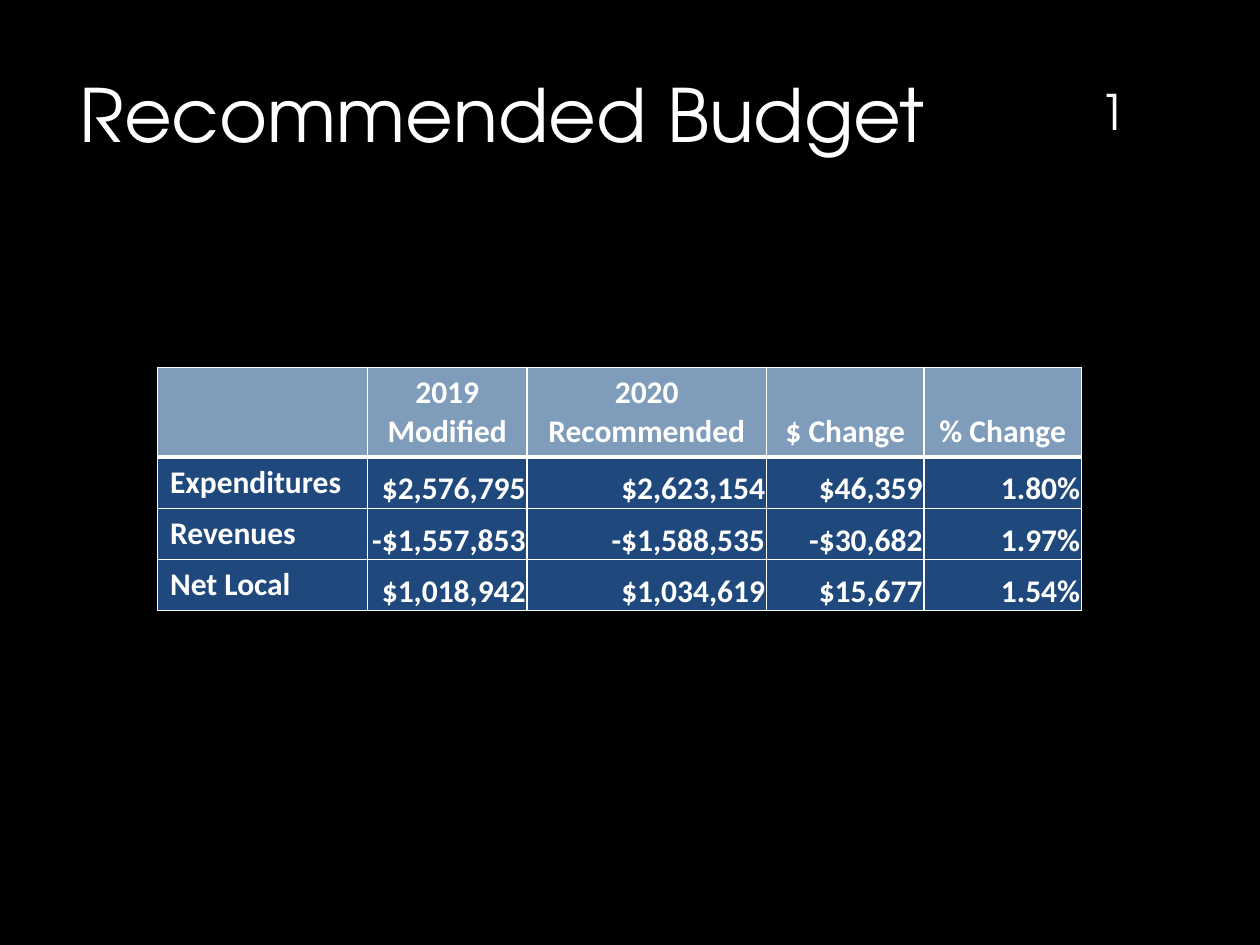
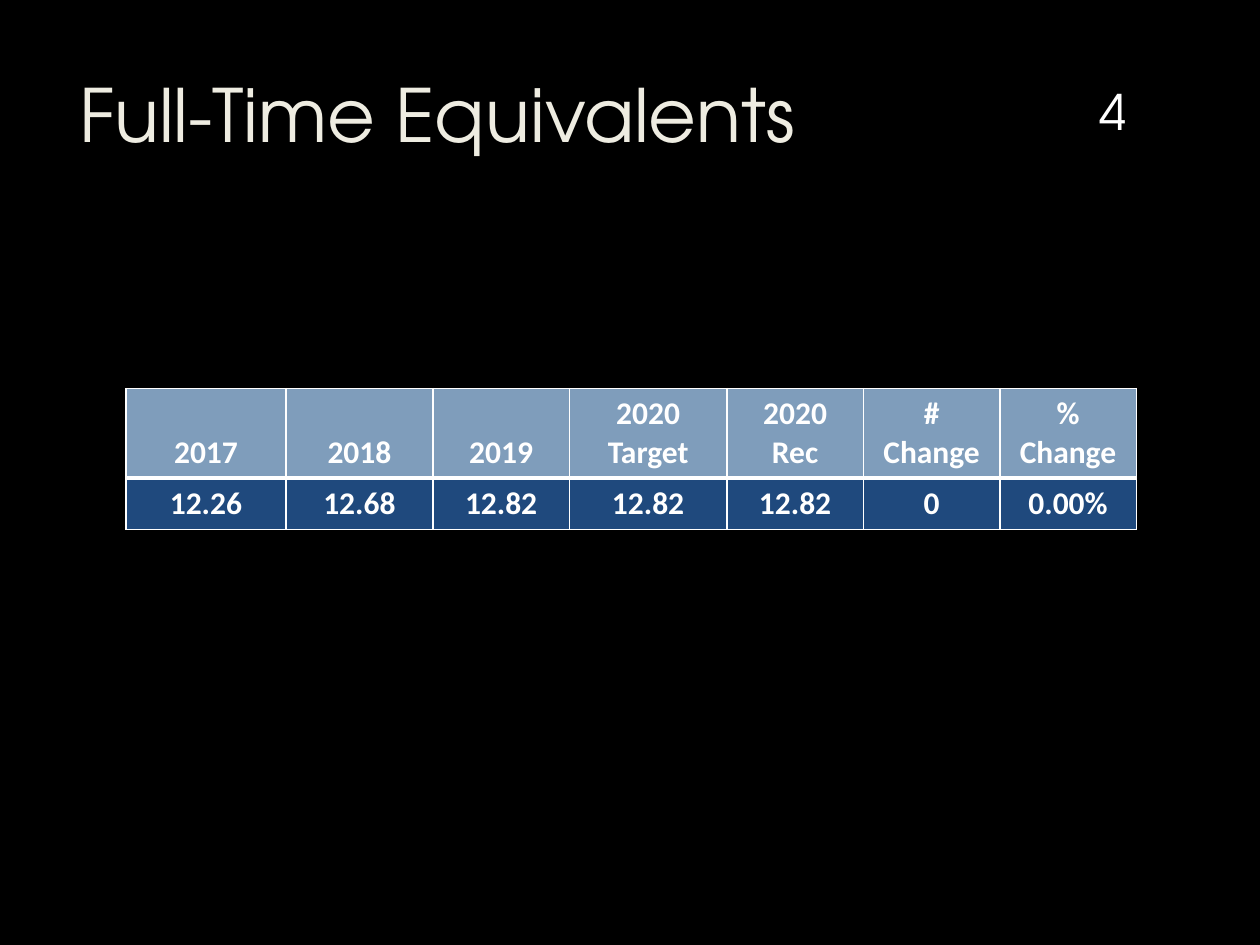
from dataclasses import dataclass

from lxml import etree
from pptx import Presentation
from pptx.dml.color import RGBColor
from pptx.enum.text import MSO_ANCHOR, MSO_AUTO_SIZE, PP_ALIGN
from pptx.oxml.ns import qn
from pptx.presentation import Presentation as Deck
from pptx.slide import Slide
from pptx.table import _Cell
from pptx.text.text import TextFrame
from pptx.util import Pt

LEFT, CENTER, RIGHT = PP_ALIGN.LEFT, PP_ALIGN.CENTER, PP_ALIGN.RIGHT
TOP, BOTTOM = MSO_ANCHOR.TOP, MSO_ANCHOR.BOTTOM
NO_AUTOFIT = MSO_AUTO_SIZE.NONE

COLORS = {
    "background": "000000",
    "white": "FFFFFF",
    "cream": "EEECE1",
    "header": "7F9DBB",
    "body": "1F497D",
}
HEADING_FONT = "TeX Gyre Adventor"
TABLE_FONT = "Calibri"
TITLE_ONLY = 5
HEADER_HEIGHT, ROW_HEIGHT = 51, 29.3
THIN, THICK = 1, 3


@dataclass(frozen=True)
class BudgetSlide:
    title: str
    title_color: str
    number: str
    left: float
    top: float
    widths: list[float]
    rows: list[list[str]]
    labelled: bool = False  # first column holds row labels, the rest amounts


SLIDES = [
    BudgetSlide(
        "Recommended Budget", "white", "1", 90, 210,
        [120, 91.2, 136.8, 90, 90],
        [
            ["", "2019\nModified", "2020\nRecommended", "$ Change", "% Change"],
            ["Expenditures", "$2,576,795", "$2,623,154", "$46,359", "1.80%"],
            ["Revenues", "-$1,557,853", "-$1,588,535", "-$30,682", "1.97%"],
            ["Net Local", "$1,018,942", "$1,034,619", "$15,677", "1.54%"],
        ],
        labelled=True,
    ),
    BudgetSlide(
        "Full-Time Equivalents", "cream", "4", 72, 222,
        [91.4, 84, 78, 90, 78, 78, 78],
        [
            ["2017", "2018", "2019", "2020 Target", "2020\nRec", "#\nChange", "%\nChange"],
            ["12.26", "12.68", "12.82", "12.82", "12.82", "0", "0.00%"],
        ],
    ),
]


def rgb(name: str) -> RGBColor:
    return RGBColor.from_string(COLORS[name])


def write(tf: TextFrame, text: str, *, font: str, size: float, color: str = "white",
          bold: bool = False, align: PP_ALIGN = LEFT) -> None:
    tf.word_wrap = True
    tf.text = text
    for p in tf.paragraphs:
        p.alignment = align
        p.font.size = Pt(size)
        for r in p.runs:
            r.font.name = font
            r.font.size = Pt(size)
            r.font.bold = bold
            r.font.color.rgb = rgb(color)


def add_borders(cell: _Cell, top: float, bottom: float) -> None:
    """Draw white cell edges; must run before the cell gets its fill."""
    tc_pr = cell._tc.get_or_add_tcPr()
    for side, width in (("L", THIN), ("R", THIN), ("T", top), ("B", bottom)):
        ln = etree.SubElement(tc_pr, qn(f"a:ln{side}"), w=str(Pt(width)))
        fill = etree.SubElement(ln, qn("a:solidFill"))
        etree.SubElement(fill, qn("a:srgbClr"), val=COLORS["white"])


def add_title(s: Slide, text: str, color: str) -> None:
    sp = s.shapes.title
    sp.left, sp.top, sp.width, sp.height = Pt(38.2), Pt(36), Pt(555.8), Pt(110)
    tf = sp.text_frame
    tf.auto_size = NO_AUTOFIT
    tf.vertical_anchor = TOP
    write(tf, text, font=HEADING_FONT, size=42, color=color)


def add_number(s: Slide, text: str) -> None:
    sp = s.shapes.add_textbox(Pt(611.3), Pt(23), Pt(49.7), Pt(60.5))
    tf = sp.text_frame
    tf.vertical_anchor = BOTTOM
    write(tf, text, font=HEADING_FONT, size=28, align=CENTER)


def add_budget_table(s: Slide, data: BudgetSlide) -> None:
    height = HEADER_HEIGHT + ROW_HEIGHT * (len(data.rows) - 1)
    frame = s.shapes.add_table(len(data.rows), len(data.widths), Pt(data.left),
                               Pt(data.top), Pt(sum(data.widths)), Pt(height))
    table = frame.table
    table.first_row = table.horz_banding = False
    for column, width in zip(table.columns, data.widths):
        column.width = Pt(width)

    for i, values in enumerate(data.rows):
        is_header = i == 0
        table.rows[i].height = Pt(HEADER_HEIGHT if is_header else ROW_HEIGHT)
        for j, value in enumerate(values):
            cell = table.cell(i, j)
            is_amount = data.labelled and not is_header and j > 0
            is_label = data.labelled and not is_header and j == 0
            add_borders(cell, THICK if i == 1 else THIN, THICK if is_header else THIN)
            cell.fill.solid()
            cell.fill.fore_color.rgb = rgb("header" if is_header else "body")
            cell.vertical_anchor = BOTTOM if is_header or is_amount else TOP
            if is_amount:
                cell.margin_left = cell.margin_right = cell.margin_top = Pt(0.75)
                cell.margin_bottom = Pt(0)
            align = RIGHT if is_amount else LEFT if is_label else CENTER
            write(cell.text_frame, value, font=TABLE_FONT, size=18, bold=True, align=align)


def add_budget_slide(prs: Deck, data: BudgetSlide) -> None:
    s = prs.slides.add_slide(prs.slide_layouts[TITLE_ONLY])
    add_title(s, data.title, data.title_color)
    add_budget_table(s, data)
    add_number(s, data.number)


def main() -> None:
    prs = Presentation()
    prs.slide_width, prs.slide_height = Pt(720), Pt(540)
    background = prs.slide_master.background.fill
    background.solid()
    background.fore_color.rgb = rgb("background")
    for data in SLIDES:
        add_budget_slide(prs, data)
    prs.save("out.pptx")


if __name__ == "__main__":
    main()
